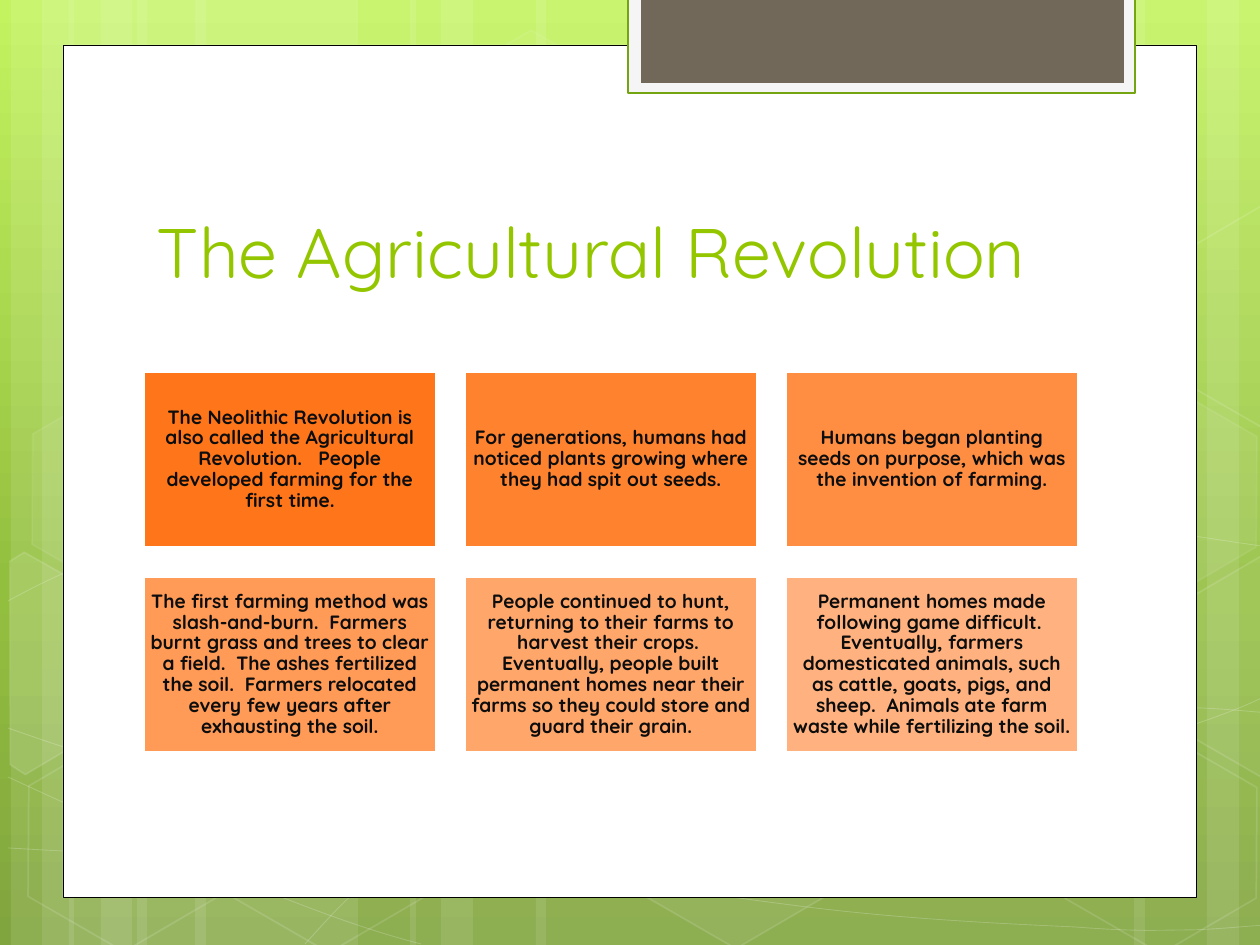
"""Build the Agricultural Revolution slide."""
from copy import deepcopy
from dataclasses import dataclass
from math import cos, radians, sin
from typing import Optional

from lxml.etree import SubElement
from pptx import Presentation
from pptx.dml.color import RGBColor
from pptx.enum.shapes import MSO_SHAPE
from pptx.enum.text import MSO_ANCHOR, PP_ALIGN
from pptx.oxml.ns import qn
from pptx.util import Emu, Pt

SCALE = 914400 / 126
WIDE, HIGH = 1260, 945
TILT = 30


@dataclass(frozen=True)
class Theme:
    font: str = "Quicksand"
    white: str = "FFFFFF"
    black: str = "000000"
    ink: str = "0D0D0D"
    title: str = "94C600"
    card: str = "FF6700"
    frame: str = "F5F5F5"
    edge: str = "74A510"
    tab: str = "71685A"
    sky: tuple = ((0, "C3F35F"), (0.62, "93BF3F"), (1, "81A53E"))
    head: int = 40
    body: int = 11


@dataclass(frozen=True)
class Box:
    left: int
    top: int
    width: int
    height: int


@dataclass(frozen=True)
class Paint:
    fill: Optional[str] = None
    alpha: int = 100
    line: Optional[str] = None
    weight: float = 1
    veil: int = 100


@dataclass(frozen=True)
class Hex:
    left: int
    top: int
    alpha: int
    veil: int


@dataclass(frozen=True)
class Facet:
    hub: tuple
    points: tuple
    alpha: int


THEME = Theme()
STRIPES = ((137, 221), (11, 63), (42, 105), (195, 221), (69, 63), (101, 105),
           (924, 221), (1207, 63), (1134, 105), (536, 388), (410, 63), (441, 105))
CURVES = (
    ((8, 848), (77, 852), (145, 856), (239, 854), (334, 853), (451, 851), (577, 838),
     (703, 825), (882, 801), (998, 777), (1113, 753), (1231, 716), (1269, 694)),
    ((8, 601), (45, 581), (82, 562), (152, 543), (224, 524), (326, 496), (437, 488),
     (549, 479), (685, 478), (824, 488), (963, 498), (1193, 537), (1269, 547)),
    ((8, 777), (160, 847), (311, 916), (421, 944)),
    ((8, 728), (48, 742), (88, 756), (161, 776), (234, 795), (344, 827), (450, 848),
     (554, 869), (687, 892), (791, 905), (896, 919), (1008, 924), (1075, 927),
     (1140, 932), (1158, 930), (1191, 930), (1223, 929), (1246, 926), (1269, 925)),
    ((305, 944), (328, 919), (350, 893), (381, 871), (411, 848), (454, 823), (489, 805),
     (524, 788), (546, 779), (592, 767), (638, 754), (722, 737), (766, 728),
     (811, 719), (818, 719), (857, 717), (896, 713), (958, 709), (1000, 708),
     (1045, 707), (1116, 708), (1116, 708), (1144, 708), (1172, 708), (1201, 708),
     (1223, 709), (1245, 711), (1256, 712), (1268, 713), (1264, 712), (1268, 713)),
)
HEXES = (Hex(421, 45, 4, 8), Hex(626, 742, 6, 12), Hex(14, 745, 0, 12),
         Hex(18, 393, 7, 8), Hex(219, 746, 0, 12), Hex(1051, 747, 0, 12),
         Hex(1051, 396, 7, 8))
RIGHT = ((1167, 611), (1261, 556), (1271, 562), (1271, 772), (1263, 777), (1167, 722))
FACETS = (
    Facet((45, 674), ((10, 561), (24, 552), (121, 607), (120, 718), (25, 774),
                      (10, 765)), 10),
    Facet((1241, 655), RIGHT, 4),
    Facet((1241, 305), tuple((x, y - 350) for x, y in RIGHT), 0),
)
FACTS = (
    "The Neolithic Revolution is also called the Agricultural Revolution.   "
    "People developed farming for the first time.",
    "For generations, humans had noticed plants growing where they had spit out seeds.",
    "Humans began planting seeds on purpose, which was the invention of farming.",
    "The first farming method was slash-and-burn.  Farmers burnt grass and trees to "
    "clear a field.  The ashes fertilized the soil.  Farmers relocated every few years "
    "after exhausting the soil.",
    "People continued to hunt, returning to their farms to harvest their crops.  "
    "Eventually, people built permanent homes near their farms so they could store and "
    "guard their grain.",
    "Permanent homes made following game difficult.  Eventually, farmers domesticated "
    "animals, such as cattle, goats, pigs, and sheep.  Animals ate farm waste while "
    "fertilizing the soil.",
)


def px(count: int) -> Emu:
    return Emu(round(count * SCALE))


def place(box: Box) -> tuple:
    return px(box.left), px(box.top), px(box.width), px(box.height)


def fade(shape, route: str, alpha: int) -> None:
    if alpha < 100:
        color = shape.element.spPr.find("/".join(qn(tag) for tag in route.split("/")))
        SubElement(color, qn("a:alpha"), val=str(alpha * 1000))


def coat(shape, paint: Paint) -> None:
    shape.shadow.inherit = False
    if paint.fill and paint.alpha:
        shape.fill.solid()
        shape.fill.fore_color.rgb = RGBColor.from_string(paint.fill)
        fade(shape, "a:solidFill/a:srgbClr", paint.alpha)
    else:
        shape.fill.background()
    if paint.line:
        shape.line.color.rgb = RGBColor.from_string(paint.line)
        shape.line.width = Pt(paint.weight)
        fade(shape, "a:ln/a:solidFill/a:srgbClr", paint.veil)
    else:
        shape.line.fill.background()


def draw(slide, box: Box, paint: Paint, kind=MSO_SHAPE.RECTANGLE):
    shape = slide.shapes.add_shape(kind, *place(box))
    coat(shape, paint)
    return shape


def trace(slide, points: tuple, paint: Paint, close: bool):
    pen = slide.shapes.build_freeform(*points[0], scale=SCALE)
    pen.add_line_segments(points[1:], close=close)
    shape = pen.convert_to_shape()
    coat(shape, paint)
    return shape


def bend(shape) -> None:
    legs = list(shape.element.iter(qn("a:lnTo")))
    route = legs[0].getparent()
    for start in range(0, len(legs), 3):
        curve = SubElement(route, qn("a:cubicBezTo"))
        for leg in legs[start:start + 3]:
            curve.append(leg[0])
            route.remove(leg)


def turn(point: tuple, hub: tuple) -> tuple:
    angle = radians(-TILT)
    x, y = point[0] - hub[0], point[1] - hub[1]
    return (hub[0] + x * cos(angle) - y * sin(angle),
            hub[1] + x * sin(angle) + y * cos(angle))


def write(shape, text: str, *, size: int, color: str, bold: bool = False,
          align=PP_ALIGN.LEFT, anchor=MSO_ANCHOR.MIDDLE, inset: int = 6,
          pitch: float = 1.0) -> None:
    frame = shape.text_frame
    frame.word_wrap = True
    frame.vertical_anchor = anchor
    frame.margin_left = frame.margin_right = px(inset)
    frame.margin_top = frame.margin_bottom = px(6)
    para = frame.paragraphs[0]
    para.alignment, para.line_spacing = align, pitch
    run = para.add_run()
    run.text = text
    run.font.name, run.font.size, run.font.bold = THEME.font, Pt(size), bold
    run.font.color.rgb = RGBColor.from_string(color)


def shade(slide) -> None:
    fill = slide.background.fill
    fill.gradient()
    fill.gradient_angle = 270
    stops = slide.element.find(".//" + qn("a:gsLst"))
    stops.append(deepcopy(stops[-1]))
    for stop, (spot, color) in zip(fill.gradient_stops, THEME.sky):
        stop.position = spot
        stop.color.rgb = RGBColor.from_string(color)


def adorn(slide) -> None:
    white = THEME.white
    for left, width in STRIPES:
        draw(slide, Box(left, 0, width, HIGH), Paint(white, 10))
    for knots in CURVES:
        bend(trace(slide, knots, Paint(line=white, weight=0.5, veil=20), False))
    for item in HEXES:
        shape = draw(slide, Box(item.left, item.top, 220, 192),
                     Paint(white, item.alpha, white, 1, item.veil), MSO_SHAPE.HEXAGON)
        shape.adjustments[0] = 0.285
        shape.rotation = TILT
    for facet in FACETS:
        points = tuple(turn(point, facet.hub) for point in facet.points)
        shape = trace(slide, points, Paint(white, facet.alpha, white, 1, 12), True)
        shape.rotation = TILT


def main() -> None:
    deck = Presentation()
    deck.slide_width, deck.slide_height = px(WIDE), px(HIGH)
    slide = deck.slides.add_slide(deck.slide_layouts[6])
    shade(slide)
    adorn(slide)
    draw(slide, Box(63, 45, 1134, 853), Paint(THEME.white, line=THEME.black, weight=0.5))
    draw(slide, Box(628, -3, 507, 96), Paint(THEME.frame, line=THEME.edge, weight=1.25))
    draw(slide, Box(641, -3, 483, 86), Paint(THEME.tab))
    title = slide.shapes.add_textbox(*place(Box(144, 141, 968, 158)))
    write(title, "The Agricultural Revolution", size=THEME.head, color=THEME.title,
          anchor=MSO_ANCHOR.BOTTOM, inset=13)
    for index, fact in enumerate(FACTS):
        row, col = divmod(index, 3)
        card = draw(slide, Box(144 + 321 * col, 372 + 205 * row, 292, 175),
                    Paint(THEME.card, 90 - 8 * index, THEME.white, 1.25))
        write(card, fact, size=THEME.body, color=THEME.ink, bold=True,
              align=PP_ALIGN.CENTER, pitch=0.9)
    deck.save("out.pptx")


if __name__ == "__main__":
    main()
